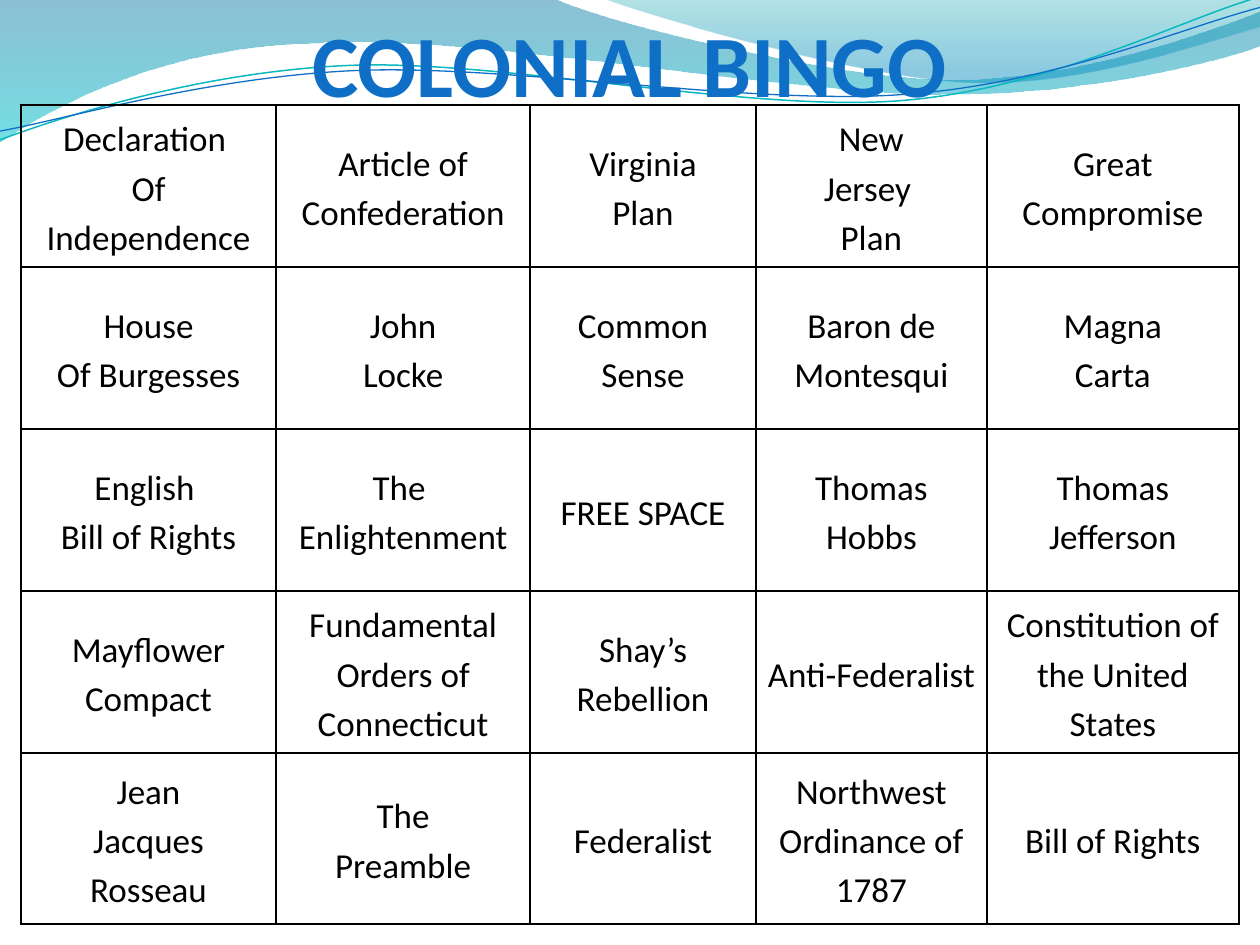
from dataclasses import dataclass
from math import cos, radians, sin

from lxml.etree import SubElement
from pptx import Presentation
from pptx.dml.color import RGBColor
from pptx.enum.text import MSO_ANCHOR as Anchor, PP_ALIGN as Align
from pptx.oxml.ns import qn
from pptx.util import Pt

COLORS = {
    "blue": "0F6FC6", "teal": "0AB8BF", "black": "000000",
    "deep_blue": "0074A1", "aqua": "00C6CF",
    "sea": "00A1A9", "sky": "008BBF",
}
FONT = "Calibri"
TILT = 2.7

COLUMN_WIDTHS = [145.8, 145.2, 129, 132, 144]
ROW_HEIGHTS = [92.57] * 4 + [97.72]
BINGO_ROWS = [
    ["Declaration \nOf\nIndependence", "Article of Confederation", "Virginia\nPlan",
     "New\nJersey \nPlan", "Great\nCompromise"],
    ["House\nOf Burgesses", "John\nLocke", "Common\nSense",
     "Baron de Montesqui", "Magna\nCarta"],
    ["English \nBill of Rights", "The \nEnlightenment", "FREE SPACE",
     "Thomas\nHobbs", "Thomas\nJefferson"],
    ["Mayflower Compact", "Fundamental Orders of Connecticut", "Shay’s Rebellion",
     "Anti-Federalist", "Constitution of the United States"],
    ["Jean\nJacques\nRosseau", "The\nPreamble", "Federalist",
     "Northwest Ordinance of 1787", "Bill of Rights"],
]


@dataclass
class Stop:
    position: float
    color: str
    opacity: int


@dataclass
class Band:
    """Segments hold one point for a straight line, three for a Bézier curve."""
    start: tuple
    segments: list
    stops: tuple


@dataclass
class Ripple:
    """An open curve, tilted about its pivot."""
    start: tuple
    segments: list
    pivot: tuple
    color: str
    width: float


BANDS = [
    Band((0, 0), [
        [(316.8, -0.7)],
        [(342.7, 12.2), (478.1, 45.4), (545.8, 45.4)],
        [(614.2, 45.4), (689.8, 18.7), (720, 6.5)],
        [(720.7, 25.9)],
        [(707.8, 31.7), (626.4, 54.7), (537.1, 54)],
        [(447.8, 54), (275, 20.2), (185, 24.5)],
        [(92.9, 25.9), (33.1, 59.8), (-0.7, 81.4)],
        [(0, 0)],
    ], (Stop(0, "deep_blue", 45), Stop(1, "aqua", 55))),
    Band((344.9, -0.7), [
        [(366.5, 7.9), (491, 44.6), (553.7, 46.8)],
        [(616.3, 49.7), (691.9, 23), (720, 15.1)],
        [(720, 0)],
        [(344.9, -0.7)],
    ], (Stop(0, "sea", 30), Stop(0.8, "sky", 45))),
]
RIPPLES = [
    Ripple((0, 79.9), [
        [(34.6, 67), (113.8, 41), (199.4, 37.4)],
        [(284.4, 33.8), (427, 64.1), (513.4, 57.6)],
        [(599.8, 51.1), (675.4, 10.8), (718.6, -1.4)],
    ], (359.3, 41.4), "teal", 0.85),
    Ripple((0, 74.9), [
        [(33.8, 69.1), (118.1, 43.9), (203.8, 40.3)],
        [(290.2, 36.7), (429.8, 60.5), (516.2, 54)],
        [(601.9, 48.2), (677.5, 15.1), (720, 4.3)],
    ], (359.6, 42.5), "blue", 0.75),
]


def rgb(name: str) -> RGBColor:
    return RGBColor.from_string(COLORS[name])


def turn(point: tuple, pivot: tuple, degrees: float) -> tuple:
    """Rotate a point clockwise about the pivot."""
    angle = radians(degrees)
    x, y = point[0] - pivot[0], point[1] - pivot[1]
    return (pivot[0] + x * cos(angle) - y * sin(angle),
            pivot[1] + x * sin(angle) + y * cos(angle))


def add_outline(shapes, start: tuple, segments: list, close: bool):
    """Build a freeform, then join each three-point segment into a Bézier curve."""
    points = [start] + [point for segment in segments for point in segment]
    vertices = [(Pt(x), Pt(y)) for x, y in points]
    builder = shapes.build_freeform(*vertices[0], scale=1.0)
    builder.add_line_segments(vertices[1:], close=close)
    shape = builder.convert_to_shape()
    shape.shadow.inherit = False
    lines = iter(list(shape._element.iter(qn("a:lnTo"))))
    for segment in segments:
        curve = next(lines)
        if len(segment) == 3:
            joined = curve.makeelement(qn("a:cubicBezTo"))
            curve.addprevious(joined)
            for line in (curve, next(lines), next(lines)):
                joined.append(line[0])
                line.getparent().remove(line)
    return shape


def draw_band(shapes, band: Band) -> None:
    shape = add_outline(shapes, band.start, band.segments, close=True)
    shape.line.fill.background()
    shape.fill.gradient()
    shape.fill.gradient_angle = 270
    for target, stop in zip(shape.fill.gradient_stops, band.stops):
        target.position = stop.position
        target.color.rgb = rgb(stop.color)
    gradient = shape._element.spPr.find(qn("a:gradFill"))
    for color, stop in zip(gradient.iter(qn("a:srgbClr")), band.stops):
        SubElement(color, qn("a:alpha"), val=str(stop.opacity * 1000))


def draw_ripple(shapes, ripple: Ripple) -> None:
    level = [[turn(point, ripple.pivot, TILT) for point in segment]
             for segment in ripple.segments]
    start = turn(ripple.start, ripple.pivot, TILT)
    shape = add_outline(shapes, start, level, close=False)
    shape.rotation = 360 - TILT
    shape.fill.background()
    shape.line.color.rgb = rgb(ripple.color)
    shape.line.width = Pt(ripple.width)


def style_text(frame, size: float, color: str, bold: bool, spacing: float) -> None:
    for para in frame.paragraphs:
        para.alignment = Align.CENTER
        para.line_spacing = spacing
        for span in para.runs:
            span.font.name = FONT
            span.font.size = Pt(size)
            span.font.bold = bold
            span.font.color.rgb = rgb(color)


def add_borders(cell) -> None:
    properties = cell._tc.get_or_add_tcPr()
    for side in ("lnL", "lnR", "lnT", "lnB"):
        line = SubElement(properties, qn(f"a:{side}"), w=str(Pt(1)))
        fill = SubElement(line, qn("a:solidFill"))
        SubElement(fill, qn("a:srgbClr"), val=COLORS["black"])


def fill_cell(cell, text: str) -> None:
    cell.text_frame.text = text
    cell.vertical_anchor = Anchor.MIDDLE
    cell.margin_left = cell.margin_right = Pt(2.2)
    cell.margin_top = cell.margin_bottom = Pt(0)
    style_text(cell.text_frame, 20, "black", False, 1.15)
    add_borders(cell)
    cell.fill.background()


def draw_bingo_card(slide) -> None:
    table = slide.shapes.add_table(
        len(ROW_HEIGHTS), len(COLUMN_WIDTHS), Pt(12), Pt(60),
        Pt(sum(COLUMN_WIDTHS)), Pt(sum(ROW_HEIGHTS))).table
    table.first_row = table.horz_banding = False
    for column, width in zip(table.columns, COLUMN_WIDTHS):
        column.width = Pt(width)
    for row, height, texts in zip(table.rows, ROW_HEIGHTS, BINGO_ROWS):
        row.height = Pt(height)
        for cell, text in zip(row.cells, texts):
            fill_cell(cell, text)


def draw_title(slide, text: str) -> None:
    box = slide.shapes.add_textbox(Pt(0), Pt(0), Pt(720), Pt(66))
    frame = box.text_frame
    frame.word_wrap = True
    frame.vertical_anchor = Anchor.BOTTOM
    frame.margin_left = frame.margin_right = frame.margin_bottom = Pt(0)
    frame.text = text
    style_text(frame, 50, "blue", True, 1.0)


def main() -> None:
    deck = Presentation()
    deck.slide_width, deck.slide_height = Pt(720), Pt(540)
    slide = deck.slides.add_slide(deck.slide_layouts[6])
    for band in BANDS:
        draw_band(slide.shapes, band)
    ripples = slide.shapes.add_group_shape()
    for ripple in RIPPLES:
        draw_ripple(ripples.shapes, ripple)
    draw_bingo_card(slide)
    draw_title(slide, "COLONIAL BINGO")
    deck.save("out.pptx")


if __name__ == "__main__":
    main()
